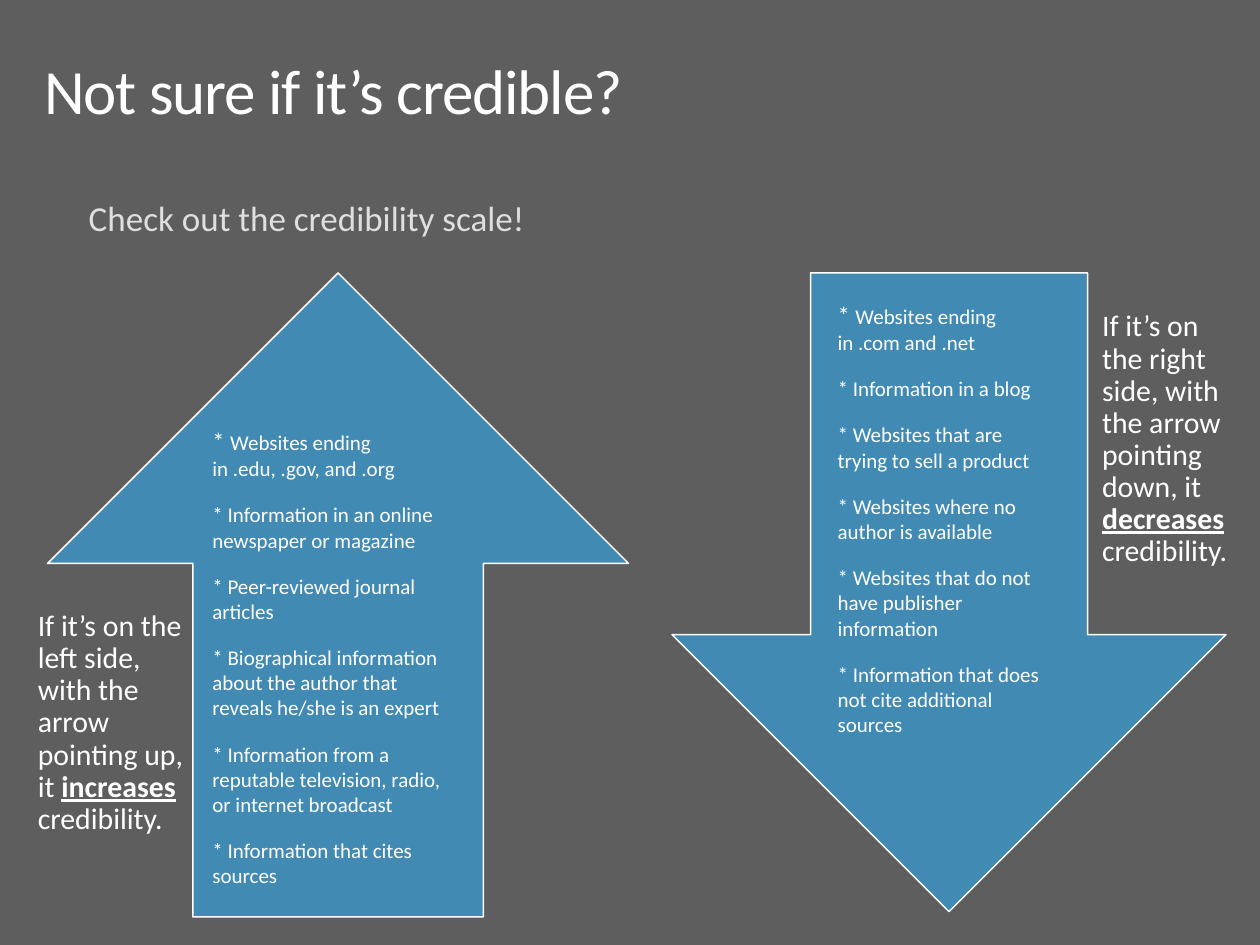
from lxml import etree
from pptx import Presentation
from pptx.dml.color import RGBColor
from pptx.enum import shapes as kinds, text as t
from pptx.oxml.ns import qn
from pptx.util import Pt

GREY = RGBColor(0x5E, 0x5E, 0x5E)
BLUE = RGBColor(0x41, 0x8A, 0xB3)
WHITE = RGBColor(0xFF, 0xFF, 0xFF)
PALE = RGBColor(0xDF, 0xDF, 0xDF)

# Non-breaking spaces keep each list of domain endings together
CREDIBLE = [
    "Websites ending in .edu, .gov, and .org",
    "Information in an online newspaper or magazine",
    "Peer-reviewed journal articles",
    "Biographical information about the author that reveals he/she is an expert",
    "Information from a reputable television, radio, or internet broadcast",
    "Information that cites sources",
]
DOUBTFUL = [
    "Websites ending in .com and .net",
    "Information in a blog",
    "Websites that are trying to sell a product",
    "Websites where no author is available",
    "Websites that do not have publisher information",
    "Information that does not cite additional sources",
]


def apply(target, values):
    for name, value in values.items():
        setattr(target, name, value)


def place(shape, left, top, width, height):
    apply(shape, {"left": Pt(left), "top": Pt(top),
                  "width": Pt(width), "height": Pt(height)})


def add_run(paragraph, words, size, color=WHITE, **style):
    run = paragraph.add_run()
    run.text = words
    apply(run.font, {"name": "Calibri", "size": Pt(size), **style})
    run.font.color.rgb = color
    return run


def fill_placeholder(holder, box, words, size, color, **spacing):
    place(holder, *box)
    apply(holder.text_frame, {"word_wrap": True,
                              "auto_size": t.MSO_AUTO_SIZE.NONE,
                              "vertical_anchor": t.MSO_ANCHOR.MIDDLE})
    paragraph = holder.text_frame.paragraphs[0]
    apply(paragraph, {"alignment": t.PP_ALIGN.LEFT, "line_spacing": 0.9, **spacing})
    return paragraph, add_run(paragraph, words, size, color)


def add_arrow(slide, direction, box):
    arrow = slide.shapes.add_shape(direction, *map(Pt, box))
    arrow.shadow.inherit = False
    arrow.fill.solid()
    arrow.fill.fore_color.rgb = BLUE
    arrow.line.color.rgb = WHITE
    arrow.line.width = Pt(0.85)


def add_text_frame(slide, box, **values):
    frame = slide.shapes.add_textbox(*map(Pt, box)).text_frame
    apply(frame, {"word_wrap": True, **values})
    return frame


def add_explanation(slide, box, opening, effect):
    frame = add_text_frame(
        slide, box, vertical_anchor=t.MSO_ANCHOR.MIDDLE, margin_left=Pt(9.4),
        margin_top=0, margin_right=Pt(9.4), margin_bottom=Pt(9.4))
    paragraph = frame.paragraphs[0]
    paragraph.line_spacing = 0.9
    add_run(paragraph, opening, 17)
    add_run(paragraph, effect, 17, bold=True, underline=True)
    add_run(paragraph, " credibility.", 17)


def add_criteria(slide, box, criteria):
    frame = add_text_frame(slide, box, auto_size=t.MSO_AUTO_SIZE.SHAPE_TO_FIT_TEXT)
    for number, criterion in enumerate(criteria):
        paragraph = frame.add_paragraph() if number else frame.paragraphs[0]
        paragraph.space_after = Pt(12)
        add_run(paragraph, "* ", 12 if number else 14)
        add_run(paragraph, criterion, 12)


def main():
    deck = Presentation()
    apply(deck, {"slide_width": Pt(720), "slide_height": Pt(540)})
    slide = deck.slides.add_slide(deck.slide_layouts[1])
    slide.background.fill.solid()
    slide.background.fill.fore_color.rgb = GREY

    # Title with slightly tightened letters, and the lead line without a bullet
    _, heading = fill_placeholder(slide.shapes.title, (18, 18, 594, 72),
                                  "Not sure if it’s credible?", 36, WHITE)
    heading.font._element.set("spc", "-60")
    lead, _ = fill_placeholder(slide.placeholders[1], (42, 90, 606, 72),
                               "Check out the credibility scale!", 20, PALE,
                               space_before=Pt(12))
    properties = lead._p.get_or_add_pPr()
    properties.set("marL", str(Pt(1.5)))
    properties.set("indent", "0")
    etree.SubElement(properties, qn("a:buNone"))

    # Left side: credibility goes up
    add_arrow(slide, kinds.MSO_SHAPE.UP_ARROW, (27.2, 156, 332, 368))
    add_explanation(slide, (12.2, 330, 105, 176),
                    "If it’s on the left side, with the arrow pointing up, it ",
                    "increases")
    add_criteria(slide, (114.3, 240, 156, 289), CREDIBLE)

    # Right side: credibility goes down
    add_arrow(slide, kinds.MSO_SHAPE.DOWN_ARROW, (384, 156, 316.6, 365))
    add_explanation(slide, (620.4, 168, 94, 176),
                    "If it’s on the right side, with the arrow pointing down, it ",
                    "decreases")
    add_criteria(slide, (471.6, 168, 138, 259), DOUBTFUL)

    deck.save("out.pptx")


if __name__ == "__main__":
    main()
